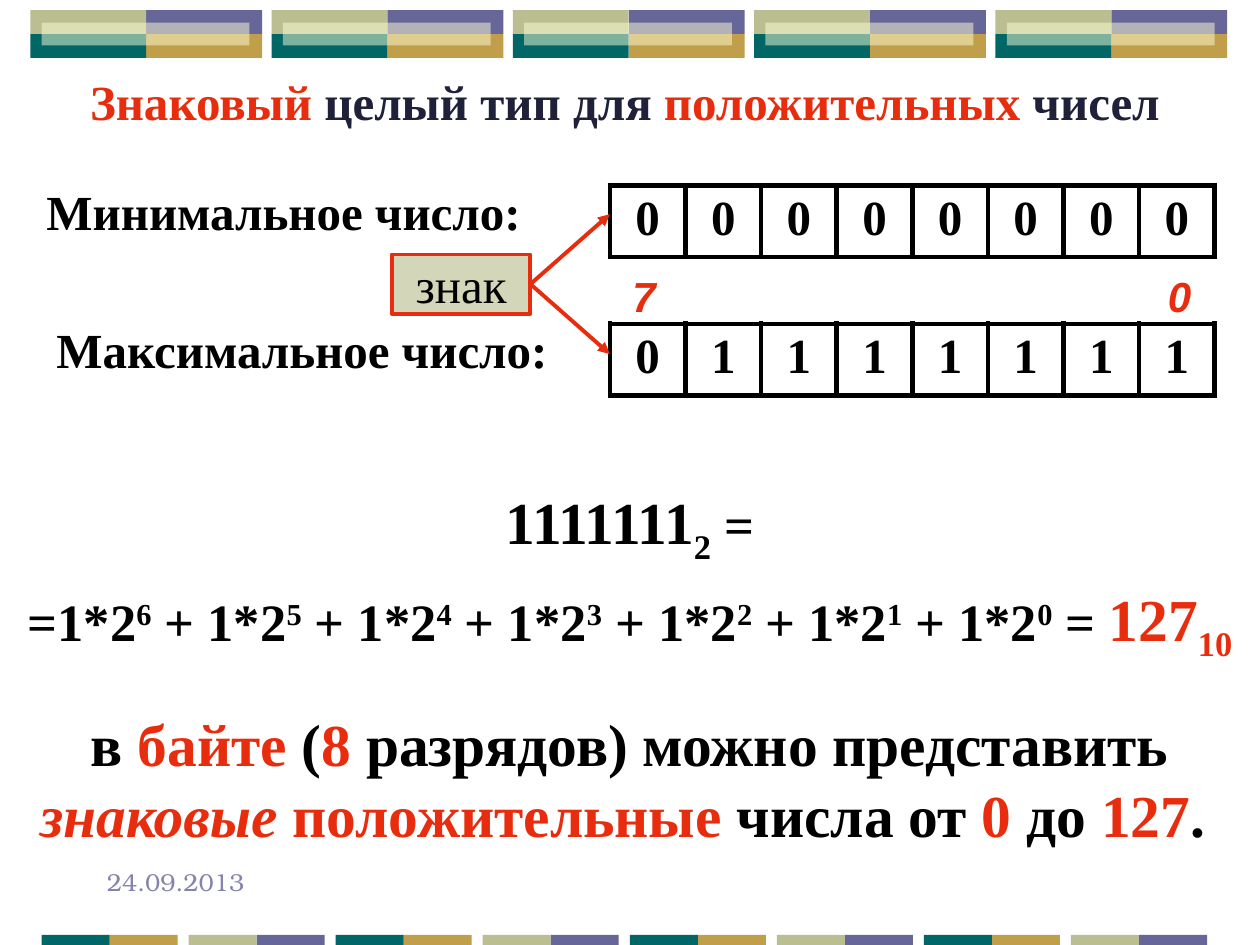
import pptx
import pptx.util
import pptx.dml.color
import pptx.enum.shapes
import pptx.enum.text
import pptx.oxml
import pptx.oxml.ns
import lxml.etree

Inches, Pt = pptx.util.Inches, pptx.util.Pt
RGBColor = pptx.dml.color.RGBColor
ALIGN = pptx.enum.text.PP_ALIGN
RECT = pptx.enum.shapes.MSO_SHAPE.RECTANGLE
LINE = pptx.enum.shapes.MSO_CONNECTOR.STRAIGHT
qn = pptx.oxml.ns.qn

RED = RGBColor(0xE8, 0x2D, 0x0E)
NAVY = RGBColor(0x1F, 0x20, 0x39)
BLACK = RGBColor(0, 0, 0)
LILAC = RGBColor(0x83, 0x83, 0xAD)
PURPLE = RGBColor(0x66, 0x66, 0x99)
GOLD = RGBColor(0xC0, 0x9E, 0x4A)
TEAL = RGBColor(0, 0x66, 0x66)
OLIVE = RGBColor(0xBA, 0xBE, 0x90)
CREAM = RGBColor(0xFE, 0xFE, 0xD6)
SAGE = RGBColor(0xD3, 0xD6, 0xB8)

SERIF = "Times New Roman"
SUB, SUP = -25000, 30000

# Runs are (text, style); "\n" alone is a line break.
TITLE = [("Знаковый ", {"color": RED}), ("целый тип для ", {}),
         ("положительных", {"color": RED}), (" чисел", {})]
LABELS = [("Минимальное число:", 0.27, 1.39, 4.02),
          ("Максимальное число:", 0.35, 2.49, 4.17)]
BYTES = [("00000000", 1.47), ("01111111", 2.57)]
MARKS = [("7", 4.92, 0.31), ("0", 9.17, 0.39)]
RANGE = [("в ", {}), ("байте", {"color": RED}), (" (", {}),
         ("8", {"color": RED}), (" разрядов) можно представить", {}),
         ("\n", {}), ("знаковые ", {"color": RED, "italic": True}),
         ("положительные", {"color": RED}), (" числа от ", {}),
         ("0", {"color": RED}), (" до ", {}), ("127", {"color": RED}),
         (". ", {})]

SUM = [("1111111", {"size": 34}), ("2", {"size": 34, "base": SUB}),
       (" =", {}), ("\n", {}), ("=", {})]
for power in range(6, -1, -1):
    SUM += [("1*2", {}), (str(power), {"base": SUP}),
            (" + " if power else " = ", {})]
SUM += [("127", {"size": 34, "color": RED}),
        ("10", {"size": 34, "color": RED, "base": SUB})]

deck = pptx.Presentation()
deck.slide_width, deck.slide_height = Inches(10), Inches(7.5)
slide = deck.slides.add_slide(deck.slide_layouts[6])
shapes = slide.shapes


def style(font, size, color, name=SERIF, bold=True, italic=False):
    font.size, font.name = Pt(size), name
    font.bold, font.italic = bold, italic
    font.color.rgb = color


def text(runs, x, y, w, h, size, color=BLACK, align=ALIGN.LEFT, **look):
    frame = shapes.add_textbox(Inches(x), Inches(y), Inches(w),
                               Inches(h)).text_frame
    frame.word_wrap = True
    para = frame.paragraphs[0]
    para.alignment = align
    style(para.font, size, color, **look)
    for words, own in runs:
        if words == "\n":
            para.add_line_break()
            continue
        run = para.add_run()
        run.text = words
        kind = {"size": size, "color": color, **look, **own}
        base = kind.pop("base", None)
        style(run.font, **kind)
        if base:
            run._r.get_or_add_rPr().set("baseline", str(base))
    return para


def block(x, y, w, h, color):
    shape = shapes.add_shape(RECT, Inches(x), Inches(y), Inches(w), Inches(h))
    shape.shadow.inherit = False
    shape.fill.solid()
    shape.fill.fore_color.rgb = color
    shape.line.fill.background()
    return shape


def bands():
    """Draw the coloured strips along the top and bottom edges."""
    w, h = 0.92, 0.18
    for i in range(5):
        x = 0.24 + i * (7.9 - 0.24) / 4
        for dx, y, color in [(w, 0.08, PURPLE), (w, 0.27, GOLD),
                             (0, 0.27, TEAL), (0, 0.08, OLIVE)]:
            block(x + dx, y, w, h + 0.01, color)
        glass = block(x + 0.09, 0.18, 1.65, h, CREAM)
        tint = glass._element.spPr.find(".//" + qn("a:srgbClr"))
        lxml.etree.SubElement(tint, qn("a:alpha")).set("val", "50000")
    for i in range(8):
        x = 0.33 + i * (8.5 - 0.33) / 7
        left, right = (OLIVE, PURPLE) if i % 2 else (TEAL, GOLD)
        block(x + 0.54, 7.42, 0.54, 0.08, right)
        block(x, 7.42, 0.54, 0.08, left)


def border(cell):
    props = cell._tc.get_or_add_tcPr()
    for i, side in enumerate(("lnL", "lnR", "lnT", "lnB")):
        props.insert(i, pptx.oxml.parse_xml(
            f'<a:{side} xmlns:a="http://schemas.openxmlformats.org/'
            f'drawingml/2006/main" w="{Pt(3)}"><a:solidFill>'
            f'<a:srgbClr val="{BLACK}"/></a:solidFill></a:{side}>'))


def grid(bits, y):
    table = shapes.add_table(1, len(bits), Inches(4.84), Inches(y),
                             Inches(4.8), Inches(0.57)).table
    table.first_row = table.horz_banding = False
    for i, bit in enumerate(bits):
        cell = table.cell(0, i)
        cell.text = bit
        cell.fill.background()
        border(cell)
        para = cell.text_frame.paragraphs[0]
        para.alignment = ALIGN.CENTER
        style(para.font, 28, BLACK)


def sign():
    """Draw the sign box with an arrow to the first bit of each byte."""
    box = block(3.11, 2.02, 1.1, 0.47, SAGE)
    box.line.color.rgb, box.line.width = RED, Pt(2.25)
    frame = box.text_frame
    frame.word_wrap = False
    frame.vertical_anchor = pptx.enum.text.MSO_ANCHOR.MIDDLE
    para = frame.paragraphs[0]
    para.text, para.alignment = "знак", ALIGN.CENTER
    style(para.font, 28, BLACK, bold=False)
    for y in (1.7, 2.81):
        arrow = shapes.add_connector(LINE, Inches(4.21), Inches(2.25),
                                     Inches(4.84), Inches(y))
        arrow.begin_connect(box, 3)
        arrow.line.color.rgb, arrow.line.width = RED, Pt(2.25)
        props = arrow._element.spPr
        tail = lxml.etree.SubElement(props.find(qn("a:ln")), qn("a:tailEnd"))
        tail.set("type", "triangle")
        lxml.etree.SubElement(props, qn("a:effectLst"))


bands()
text(TITLE, 0.43, 0.52, 9.06, 0.57, 28, NAVY, ALIGN.CENTER)
for words, x, y, w in LABELS:
    text([(words, {})], x, y, w, 0.57, 28)
for bits, y in BYTES:
    grid(bits, y)
text(SUM, 0, 3.67, 10, 1.46, 30, align=ALIGN.CENTER).line_spacing = 1.2
text(RANGE, 0, 5.56, 10, 1.23, 34, align=ALIGN.CENTER)
sign()
for words, x, w in MARKS:
    text([(words, {})], x, 2.1, w, 0.5, 24, RED, name="Arial", italic=True)
text([("24.09.2013", {})], 0.75, 6.83, 2.08, 0.5, 14, LILAC,
     name="TeX Gyre Bonum", bold=False)
deck.save("out.pptx")
